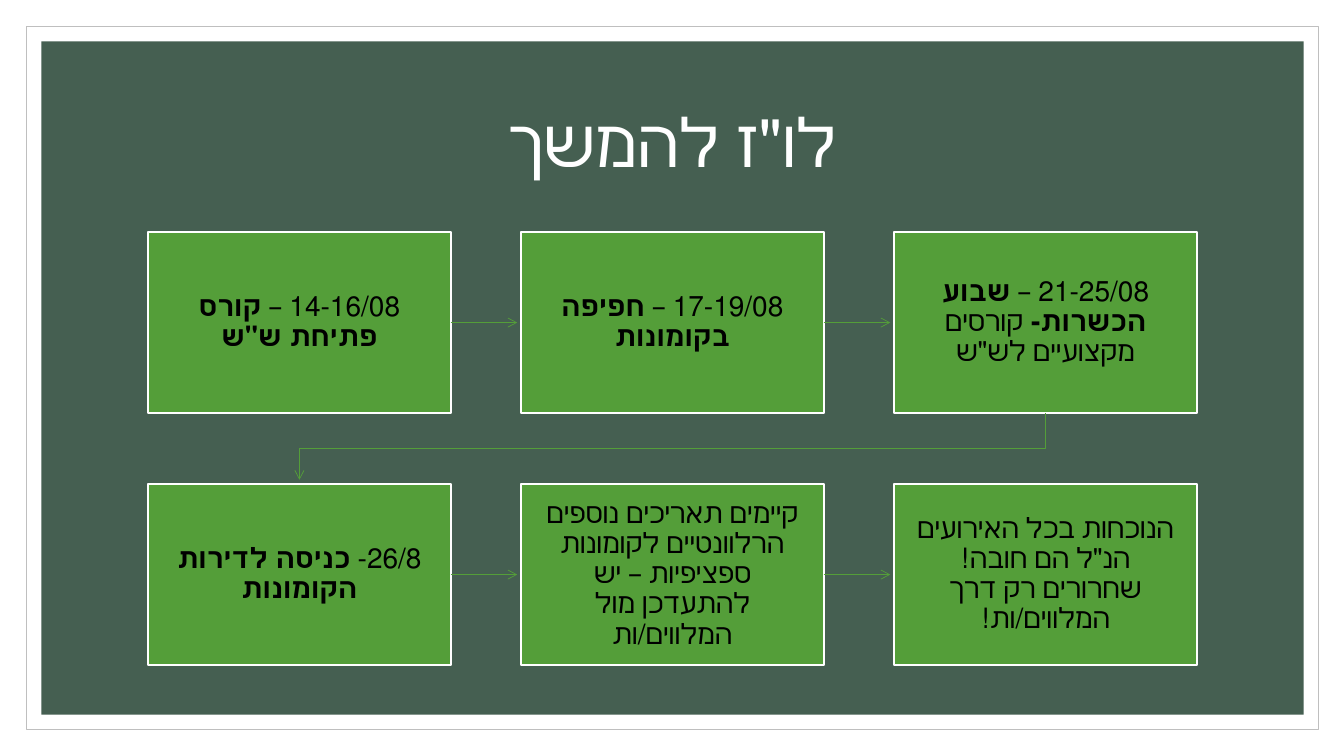
from itertools import pairwise

from lxml.etree import SubElement
from pptx import Presentation
from pptx.dml.color import RGBColor
from pptx.enum.shapes import MSO_CONNECTOR, MSO_SHAPE
from pptx.enum.text import MSO_ANCHOR, PP_ALIGN
from pptx.oxml.ns import qn
from pptx.util import Pt

WHITE = RGBColor(0xFF, 0xFF, 0xFF)
BLACK = RGBColor(0x00, 0x00, 0x00)
SILVER = RGBColor(0xBF, 0xBF, 0xBF)
FOREST = RGBColor(0x45, 0x5F, 0x51)
GREEN = RGBColor(0x54, 0x9E, 0x39)

SCALE = 9144
FONT = "Calibri"
LEFT, TOP = 147, 230
STEP_ACROSS, STEP_DOWN = 370, 250
BOX_WIDTH, BOX_HEIGHT = 300, 180
ARROW_GAP = 4

TITLE = 'לו"ז להמשך'
SCHEDULE = [
    [
        [("14-16/08 – ", False), ('קורס פתיחת ש"ש', True)],
        [("17-19/08 – ", False), ("חפיפה בקומונות", True)],
        [("21-25/08 – ", False), ("שבוע הכשרות- ", True), ('קורסים מקצועיים לש"ש', False)],
    ],
    [
        [("26/8- ", False), ("כניסה לדירות הקומונות", True)],
        [("קיימים תאריכים נוספים הרלוונטיים לקומונות ספציפיות – יש להתעדכן מול המלווים/ות", False)],
        [('הנוכחות בכל האירועים הנ"ל הם חובה! שחרורים רק דרך המלווים/ות!', False)],
    ],
]


def px(length):
    return length * SCALE


def write_text(frame, spans, size, color, margin=None, space_after=0):
    frame.word_wrap = True
    frame.vertical_anchor = MSO_ANCHOR.MIDDLE
    if margin is not None:
        frame.margin_left = frame.margin_right = px(margin)
        frame.margin_top = frame.margin_bottom = px(margin)
    para = frame.paragraphs[0]
    para.alignment = PP_ALIGN.CENTER
    para.line_spacing = 0.9
    para.space_after = Pt(space_after)
    para._p.get_or_add_pPr().set("rtl", "1")
    for text, bold in spans:
        span = para.add_run()
        span.text = text
        span.font.name = FONT
        span.font.size = Pt(size)
        span.font.bold = bold
        span.font.color.rgb = color


class SchedulePage:
    def __init__(self, deck):
        self.page = deck.slides.add_slide(deck.slide_layouts[5])
        self.shapes = self.page.shapes

    def title(self, text):
        title = self.shapes.title
        title.left, title.top, title.width, title.height = px(117), px(70), px(1100), px(150)
        write_text(title.text_frame, [(text, False)], size=48, color=WHITE)
        title.element.getparent().append(title.element)

    def rectangle(self, left, top, width, height, fill, line=None, weight=0):
        box = self.shapes.add_shape(MSO_SHAPE.RECTANGLE, px(left), px(top), px(width), px(height))
        box.shadow.inherit = False
        box.fill.solid()
        box.fill.fore_color.rgb = fill
        if line is None:
            box.line.fill.background()
        else:
            box.line.color.rgb = line
            box.line.width = Pt(weight)
        return box

    def step(self, column, row, spans):
        box = self.rectangle(
            LEFT + column * STEP_ACROSS, TOP + row * STEP_DOWN,
            BOX_WIDTH, BOX_HEIGHT, GREEN, WHITE, 1.5,
        )
        write_text(box.text_frame, spans, size=20, color=BLACK, margin=15, space_after=7)
        return box

    def arrow_line(self, shape):
        shape.line.color.rgb = GREEN
        shape.line.width = Pt(0.5)
        line = shape.element.spPr.find(qn("a:ln"))
        SubElement(line, qn("a:tailEnd"), type="arrow")

    def arrow_across(self, start, end):
        middle = start.top + start.height // 2
        arrow = self.shapes.add_connector(
            MSO_CONNECTOR.STRAIGHT, start.left + start.width, middle,
            end.left - px(ARROW_GAP), middle,
        )
        arrow.begin_connect(start, 3)
        self.arrow_line(arrow)
        SubElement(arrow.element.spPr, qn("a:effectLst"))

    def arrow_to_next_row(self, start, end):
        start_x = start.left + start.width // 2
        end_x = end.left + end.width // 2
        bottom = start.top + start.height
        turn = (bottom + end.top) // 2
        builder = self.shapes.build_freeform(start_x, bottom)
        builder.add_line_segments(
            [(start_x, turn), (end_x, turn), (end_x, end.top - px(ARROW_GAP))], close=False
        )
        arrow = builder.convert_to_shape()
        arrow.shadow.inherit = False
        arrow.fill.background()
        self.arrow_line(arrow)


def main():
    deck = Presentation()
    deck.slide_width, deck.slide_height = px(1333), px(750)
    page = SchedulePage(deck)
    page.rectangle(26, 26, 1282, 698, WHITE, SILVER, 0.5)
    page.rectangle(41, 41, 1252, 668, FOREST)
    page.title(TITLE)
    rows = [
        [page.step(column, row, spans) for column, spans in enumerate(steps)]
        for row, steps in enumerate(SCHEDULE)
    ]
    for boxes in rows:
        for start, end in pairwise(boxes):
            page.arrow_across(start, end)
    for upper, lower in pairwise(rows):
        page.arrow_to_next_row(upper[-1], lower[0])
    deck.save("out.pptx")


if __name__ == "__main__":
    main()
